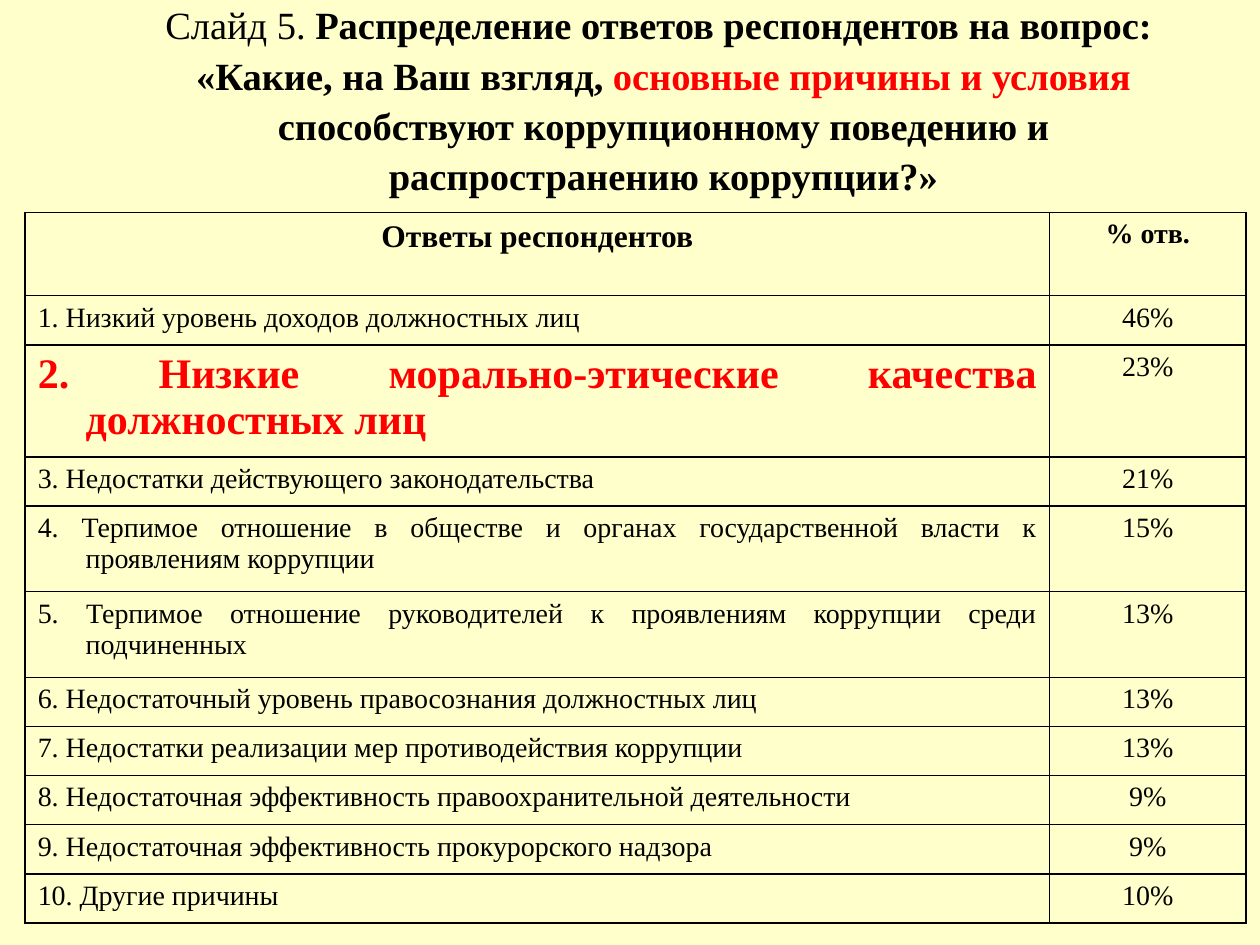
from dataclasses import dataclass
from typing import NamedTuple

from lxml import etree
from pptx import Presentation, util as u
from pptx.dml.color import RGBColor
from pptx.enum import text as t
from pptx.oxml import ns


@dataclass(frozen=True)
class Theme:
    font: str = "Times New Roman"
    back: str = "FFFFCC"
    ink: str = "000000"
    mark: str = "FF0000"
    title: int = 22
    head: int = 18
    body: int = 16
    big: int = 24
    line: int = 1


class Run(NamedTuple):
    text: str
    size: int
    bold: bool = False
    color: str = Theme.ink


class Row(NamedTuple):
    cause: Run
    share: Run
    high: float


LOOK = Theme()
WIDE, HIGH = u.Inches(10), u.Inches(7.5)
LOW, TWO = 0.39, 0.68
COLS = (8.13, 1.56)
HANG = u.Inches(0.38)
MID, FULL = t.PP_ALIGN.CENTER, t.PP_ALIGN.JUSTIFY

TITLE = (
    Run("Слайд 5. ", LOOK.title),
    Run("Распределение ответов респондентов на вопрос: ", LOOK.title, True),
    Run("\n", LOOK.title),
    Run("«Какие, на Ваш взгляд, ", LOOK.title, True),
    Run("основные причины и условия ", LOOK.title, True, LOOK.mark),
    Run("способствуют коррупционному поведению и распространению коррупции?»",
        LOOK.title, True),
)


def plain(cause: str, share: int, high: float = LOW) -> Row:
    return Row(Run(cause, LOOK.body), Run(f"{share}%", LOOK.body), high)


ROWS = (
    Row(Run("Ответы респондентов", LOOK.head, True),
        Run("% отв.", LOOK.body, True), 0.66),
    plain("1. Низкий уровень доходов должностных лиц", 46),
    Row(Run("2. Низкие морально-этические качества должностных лиц",
            LOOK.big, True, LOOK.mark), Run("23%", LOOK.body), 0.89),
    plain("3. Недостатки действующего законодательства", 21),
    plain("4. Терпимое отношение в обществе и органах государственной власти "
          "к проявлениям коррупции", 15, TWO),
    plain("5. Терпимое отношение руководителей к проявлениям коррупции "
          "среди подчиненных", 13, TWO),
    plain("6. Недостаточный уровень правосознания должностных лиц", 13),
    plain("7. Недостатки реализации мер противодействия коррупции", 13),
    plain("8. Недостаточная эффективность правоохранительной деятельности", 9),
    plain("9. Недостаточная эффективность прокурорского надзора", 9),
    plain("10. Другие причины", 10),
)


def add_run(para, item: Run) -> None:
    if item.text == "\n":
        para.add_line_break()
        return
    run = para.add_run()
    run.text = item.text
    font = run.font
    font.name, font.size, font.bold = LOOK.font, u.Pt(item.size), item.bold
    font.color.rgb = RGBColor.from_string(item.color)


def add_title(slide) -> None:
    shape = slide.shapes.title
    shape.left, shape.top = int(WIDE * 0.114), int(HIGH * -0.015)
    shape.width, shape.height = int(WIDE * 0.825), int(HIGH * 0.237)
    frame = shape.text_frame
    frame.word_wrap = True
    frame.auto_size = t.MSO_AUTO_SIZE.NONE
    frame.vertical_anchor = t.MSO_ANCHOR.MIDDLE
    para = frame.paragraphs[0]
    para.alignment, para.line_spacing = MID, 1.09
    for item in TITLE:
        add_run(para, item)


def add_edges(cell) -> None:
    props = cell._tc.get_or_add_tcPr()
    for side in ("lnL", "lnR", "lnT", "lnB"):
        line = etree.SubElement(props, ns.qn(f"a:{side}"),
                                w=str(u.Pt(LOOK.line)))
        fill = etree.SubElement(line, ns.qn("a:solidFill"))
        etree.SubElement(fill, ns.qn("a:srgbClr"), val=LOOK.ink)


def fill_cell(cell, item: Run, align) -> None:
    add_edges(cell)
    cell.fill.background()
    para = cell.text_frame.paragraphs[0]
    para.alignment = align
    props = para._p.get_or_add_pPr()
    props.set("marL", str(HANG))
    props.set("indent", str(-HANG))
    add_run(para, item)


def add_grid(slide) -> None:
    tall = sum(row.high for row in ROWS)
    frame = slide.shapes.add_table(
        len(ROWS), len(COLS), int(WIDE * 0.02), int(HIGH * 0.225),
        u.Inches(sum(COLS)), u.Inches(tall))
    grid = frame.table
    grid.first_row = grid.horz_banding = False
    for col, wide in zip(grid.columns, COLS):
        col.width = u.Inches(wide)
    for i, row in enumerate(ROWS):
        grid.rows[i].height = u.Inches(row.high)
        fill_cell(grid.cell(i, 0), row.cause, FULL if i else MID)
        fill_cell(grid.cell(i, 1), row.share, MID)


def main() -> None:
    deck = Presentation()
    deck.slide_width, deck.slide_height = WIDE, HIGH
    slide = deck.slides.add_slide(deck.slide_layouts[5])
    fill = slide.background.fill
    fill.solid()
    fill.fore_color.rgb = RGBColor.from_string(LOOK.back)
    add_title(slide)
    add_grid(slide)
    deck.save("out.pptx")


if __name__ == "__main__":
    main()
